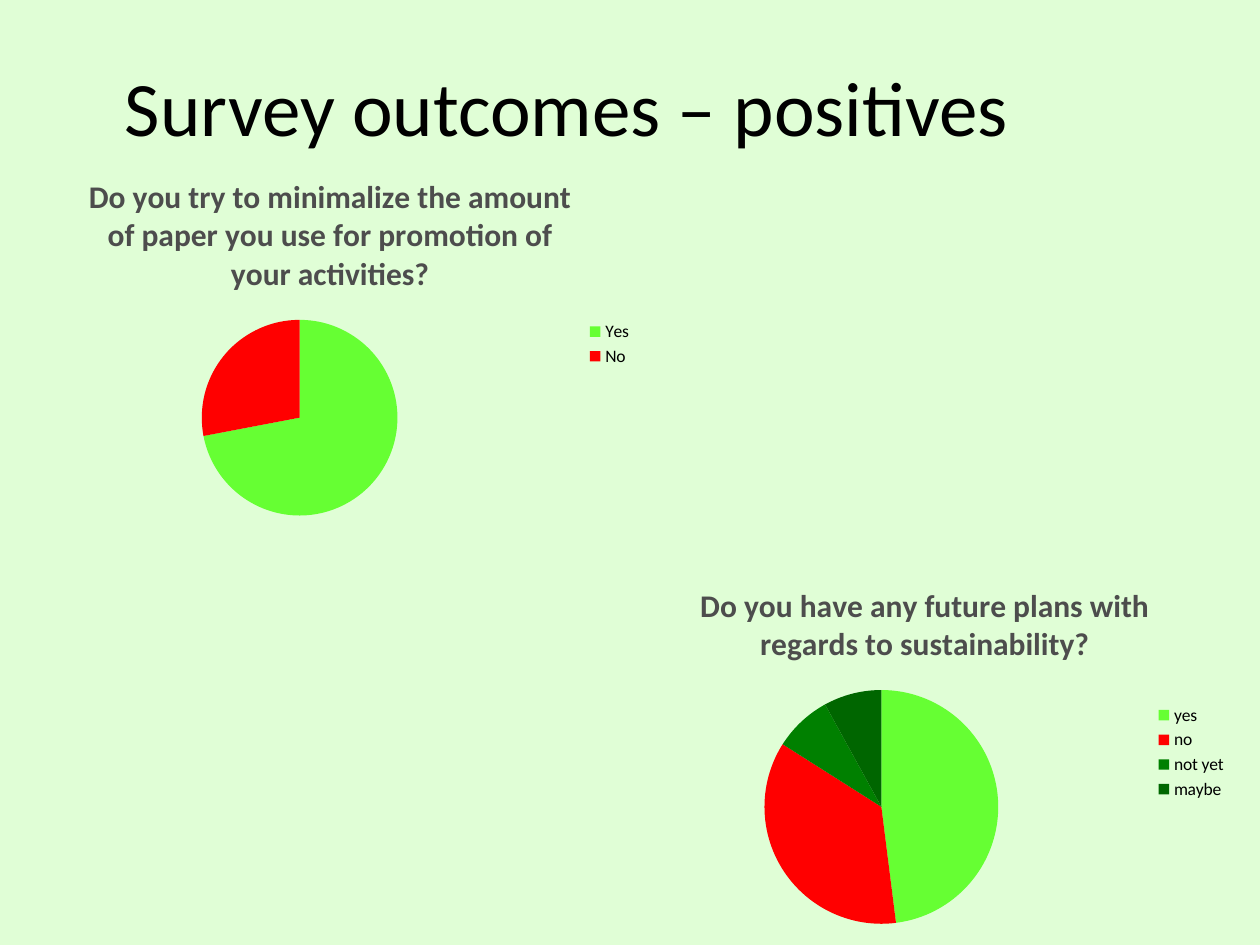
from pptx import Presentation
from pptx.chart.data import CategoryChartData
from pptx.dml.color import RGBColor
from pptx.enum.chart import XL_CHART_TYPE as ChartType, XL_LEGEND_POSITION as LegendPosition
from pptx.enum.text import MSO_ANCHOR as Anchor, PP_ALIGN as Align
from pptx.util import Inches, Pt

WIDTH, HEIGHT = 10, 7.5
FONT = "Calibri"
BACKGROUND, BLACK, GREY = "E0FED6", "000000", "4D4D4D"
SLICE_COLOURS = ["66FF33", "FF0000", "008000", "006600"]
CHART_SIZE = (WIDTH * 0.5, HEIGHT * 0.4)

HEADING = "Survey outcomes – positives"
QUESTIONS = [
    ("Do you try to minimalize the amount of paper you use for promotion of your activities?",
     (0.12, 1.23), [("Yes", 72), ("No", 28)]),
    ("Do you have any future plans with regards to sustainability?",
     (4.84, 4.47), [("yes", 48), ("no", 36), ("not yet", 8), ("maybe", 8)]),
]


def colour(hex_string):
    return RGBColor.from_string(hex_string)


def style(font, size, hex_string, bold=False):
    font.name = FONT
    font.size = Pt(size)
    font.bold = bold
    font.color.rgb = colour(hex_string)


def add_heading(slide):
    box = slide.shapes.add_textbox(0, Inches(0.21), Inches(WIDTH * 0.9), Inches(1.25))
    frame = box.text_frame
    frame.word_wrap = True
    frame.vertical_anchor = Anchor.MIDDLE
    paragraph = frame.paragraphs[0]
    paragraph.alignment = Align.CENTER
    run = paragraph.add_run()
    run.text = HEADING
    style(run.font, 44, BLACK)


def add_pie(slide, question, position, answers):
    data = CategoryChartData()
    data.categories = [answer for answer, share in answers]
    data.add_series("Series 1", [share for answer, share in answers])
    place = [Inches(length) for length in position + CHART_SIZE]
    chart = slide.shapes.add_chart(ChartType.PIE, *place, data).chart
    style(chart.font, 10, BLACK)

    chart.has_title = True
    chart.chart_title.include_in_layout = False
    run = chart.chart_title.text_frame.paragraphs[0].add_run()
    run.text = question
    style(run.font, 18, GREY, bold=True)

    chart.has_legend = True
    chart.legend.position = LegendPosition.RIGHT
    chart.legend.include_in_layout = False

    plot = chart.plots[0]
    plot.vary_by_categories = True
    for index, slice_colour in enumerate(SLICE_COLOURS[:len(answers)]):
        fill = plot.series[0].points[index].format.fill
        fill.solid()
        fill.fore_color.rgb = colour(slice_colour)


def main():
    presentation = Presentation()
    presentation.slide_width = Inches(WIDTH)
    presentation.slide_height = Inches(HEIGHT)
    slide = presentation.slides.add_slide(presentation.slide_layouts[6])
    slide.background.fill.solid()
    slide.background.fill.fore_color.rgb = colour(BACKGROUND)
    add_heading(slide)
    for question, position, answers in QUESTIONS:
        add_pie(slide, question, position, answers)
    presentation.save("out.pptx")


if __name__ == "__main__":
    main()
